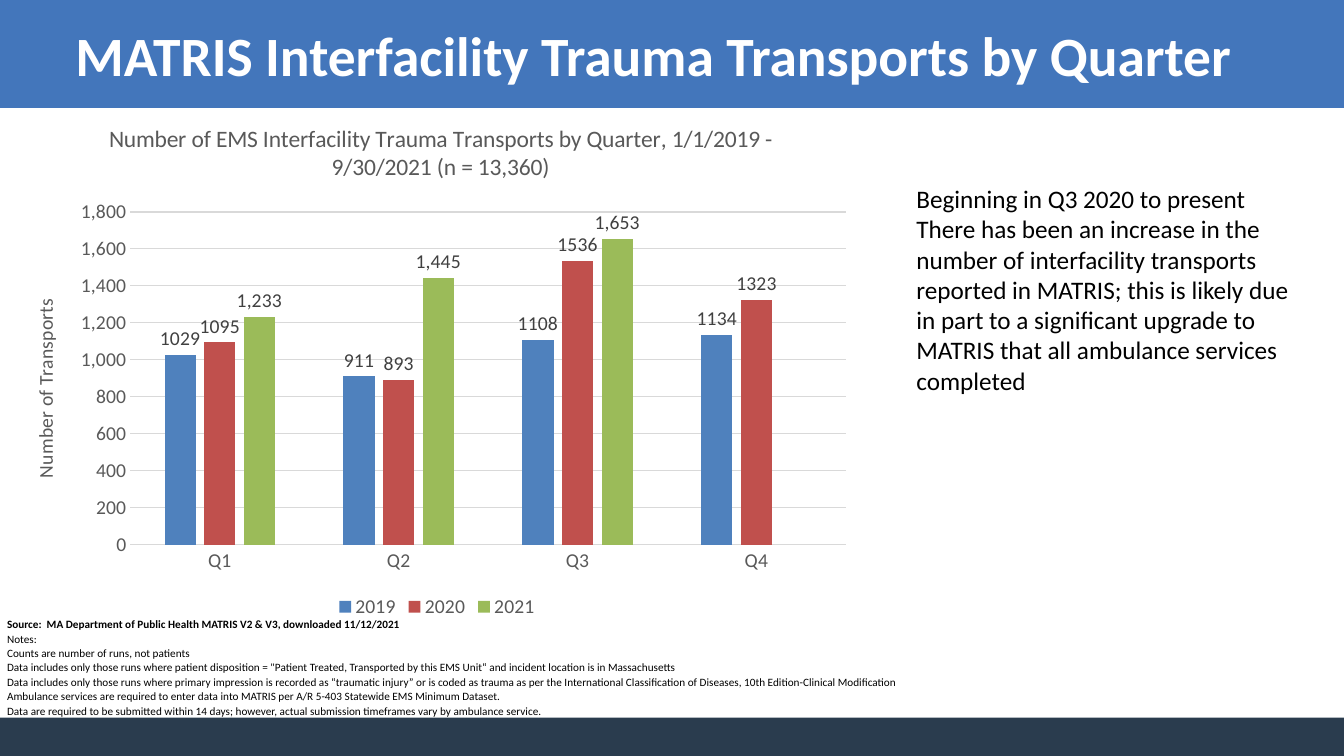
import pptx
import pptx.chart.data
import pptx.dml.color
import pptx.enum.chart
import pptx.enum.shapes
import pptx.enum.text
import pptx.oxml
import pptx.oxml.ns
import pptx.util
from pptx.util import Inches

FONT = "Calibri"
WIDTH, HEIGHT = 13.33, 7.5
TITLE = "MATRIS Interfacility Trauma Transports by Quarter"
COMMENT = (
    "Beginning in Q3 2020 to present There has been an increase in the number of "
    "interfacility transports reported in MATRIS; this is likely due in part to a "
    "significant upgrade to MATRIS that all ambulance services completed"
)
CHART_TITLE = ("Number of EMS Interfacility Trauma Transports by Quarter, "
               "1/1/2019 - 9/30/2021 (n = 13,360)")
AXIS_TITLE = "Number of Transports"
QUARTERS = ["Q1", "Q2", "Q3", "Q4"]
# year, transports, colour, label format
YEARS = [
    ("2019", (1029, 911, 1108, 1134), "4F81BD", "General"),
    ("2020", (1095, 893, 1536, 1323), "C0504D", "General"),
    ("2021", (1233, 1445, 1653, None), "9BBB59", "#,##0"),
]
# note, whether it spans both columns
NOTES = [
    ("Source:  MA Department of Public Health MATRIS V2 & V3, downloaded 11/12/2021", True),
    ("Notes:", False),
    ("Counts are number of runs, not patients", False),
    ("Data includes only those runs where patient disposition = \"Patient Treated, "
     "Transported by this EMS Unit“ and incident location is in Massachusetts", True),
    ("Data includes only those runs where primary impression is recorded as “traumatic "
     "injury” or is coded as trauma as per the International Classification of Diseases, "
     "10th Edition-Clinical Modification", True),
    ("Ambulance services are required to enter data into MATRIS per A/R 5-403 "
     "Statewide EMS Minimum Dataset.", True),
    ("Data are required to be submitted within 14 days; however, actual submission "
     "timeframes vary by ambulance service.", True),
]
BANDS = [(0, 1.07, "4376BB"), (7.12, 0.38, "2A3C4E")]  # top, height, colour
NOTE_COLUMNS = (9.04, 1.23)
NOTE_ROW = 0.14


def color(value):
    return pptx.dml.color.RGBColor.from_string(value)


def set_font(font, size, value, bold=False):
    font.name = FONT
    font.size = pptx.util.Pt(size)
    font.bold = bold
    font.color.rgb = color(value)


def add_text(slide, box, text, size, value, bold=False, anchor="TOP"):
    frame = slide.shapes.add_textbox(*map(Inches, box)).text_frame
    frame.word_wrap = True
    frame.vertical_anchor = getattr(pptx.enum.text.MSO_ANCHOR, anchor)
    frame.text = text
    set_font(frame.paragraphs[0].font, size, value, bold)


def set_title(owner, text, size):
    frame = owner.text_frame
    frame.text = text
    set_font(frame.paragraphs[0].font, size, "595959")


def place(element, **fractions):
    """Give a chart part a manual layout, in fractions of the chart."""
    inner = '<c:layoutTarget val="inner"/>' if "w" in fractions else ""
    modes = "".join(f'<c:{key}Mode val="edge"/>' for key in "xy")
    values = "".join(f'<c:{key} val="{value}"/>' for key, value in fractions.items())
    layout = pptx.oxml.parse_xml(
        f'<c:layout {pptx.oxml.ns.nsdecls("c")}><c:manualLayout>'
        f'{inner}{modes}{values}</c:manualLayout></c:layout>')
    for old in element.findall(pptx.oxml.ns.qn("c:layout")):
        element.remove(old)
    text = element.find(pptx.oxml.ns.qn("c:tx"))
    if text is None:
        element.insert(0, layout)
    else:
        text.addnext(layout)


def add_transport_chart(slide):
    data = pptx.chart.data.CategoryChartData()
    data.categories = QUARTERS
    for year, values, _, number_format in YEARS:
        data.add_series(year, values, number_format)
    chart = slide.shapes.add_chart(
        pptx.enum.chart.XL_CHART_TYPE.COLUMN_CLUSTERED,
        *map(Inches, (0.11, 1.02, 8.45, 5.16)), data).chart
    set_font(chart.font, 14, "000000")
    set_title(chart.chart_title, CHART_TITLE, 16.8)
    place(chart.chart_title._element, x=0.11, y=0.03)

    # Axes and legend
    categories, values = chart.category_axis, chart.value_axis
    for axis in (categories, values):
        set_font(axis.tick_labels.font, 14, "595959")
        axis.major_tick_mark = pptx.enum.chart.XL_TICK_MARK.NONE
    values.minimum_scale, values.maximum_scale, values.major_unit = 0, 1800, 200
    values.tick_labels.number_format = "#,##0"
    values.tick_labels.number_format_is_linked = False
    values.format.line.fill.background()
    for line in (categories.format.line, values.major_gridlines.format.line):
        line.color.rgb = color("D9D9D9")
        line.width = pptx.util.Pt(0.75)
    set_title(values.axis_title, AXIS_TITLE, 14)
    values.axis_title.text_frame._txBody.bodyPr.set("rot", "-5400000")
    place(values.axis_title._element, x=0.02, y=0.37)
    chart.has_legend = True
    chart.legend.position = pptx.enum.chart.XL_LEGEND_POSITION.BOTTOM
    chart.legend.include_in_layout = False
    set_font(chart.legend.font, 14, "595959")

    # Columns and their labels
    plot = chart.plots[0]
    plot.gap_width, plot.overlap, plot.vary_by_categories = 219, -27, False
    place(chart._chartSpace.chart.plotArea, x=0.14, y=0.21, w=0.84, h=0.64)
    for series, (_, _, fill, number_format) in zip(plot.series, YEARS):
        series.format.fill.solid()
        series.format.fill.fore_color.rgb = color(fill)
        labels = series.data_labels
        labels.show_value = True
        labels.position = pptx.enum.chart.XL_LABEL_POSITION.OUTSIDE_END
        labels.number_format = number_format
        labels.number_format_is_linked = False
        set_font(labels.font, 14, "404040")


def add_notes_table(slide):
    table = slide.shapes.add_table(
        len(NOTES), len(NOTE_COLUMNS), Inches(0.06), Inches(6.12),
        Inches(sum(NOTE_COLUMNS)), Inches(NOTE_ROW * len(NOTES))).table
    table.first_row = table.horz_banding = False
    for column, width in zip(table.columns, NOTE_COLUMNS):
        column.width = Inches(width)
    for index, (note, spans) in enumerate(NOTES):
        table.rows[index].height = Inches(NOTE_ROW)
        for cell in table.rows[index].cells:
            cell.fill.background()
            cell.margin_left = cell.margin_right = cell.margin_top = Inches(0.01)
            cell.margin_bottom = 0
            cell.vertical_anchor = pptx.enum.text.MSO_ANCHOR.BOTTOM
            paragraph = cell.text_frame.paragraphs[0]
            set_font(paragraph.font, 8, "000000", index == 0)
            # Keep empty cells as low as the text beside them
            paragraph._p.append(pptx.oxml.parse_xml(
                f'<a:endParaRPr {pptx.oxml.ns.nsdecls("a")} sz="800"/>'))
        first, last = table.cell(index, 0), table.cell(index, 1)
        if spans:
            first.merge(last)
        first.text_frame.paragraphs[0].add_run().text = note
    # Plain style without borders
    style = table._tbl.tblPr.find(pptx.oxml.ns.qn("a:tableStyleId"))
    style.text = "{2D5ABB26-0587-4C30-8999-92F81FD0307C}"


def main():
    presentation = pptx.Presentation()
    presentation.slide_width = Inches(WIDTH)
    presentation.slide_height = Inches(HEIGHT)
    slide = presentation.slides.add_slide(presentation.slide_layouts[6])

    # Header and footer bands
    for top, height, fill in BANDS:
        band = slide.shapes.add_shape(
            pptx.enum.shapes.MSO_SHAPE.RECTANGLE,
            *map(Inches, (0, top, WIDTH, height)))
        band.shadow.inherit = False
        band.fill.solid()
        band.fill.fore_color.rgb = color(fill)
        band.line.fill.background()

    add_text(slide, (0.65, 0.06, 12, 0.96), TITLE, 39.6, "FFFFFF", True, "MIDDLE")
    add_transport_chart(slide)
    add_text(slide, (8.99, 1.77, 3.98, 2.22), COMMENT, 18, "000000")
    add_notes_table(slide)
    presentation.save("out.pptx")


if __name__ == "__main__":
    main()
